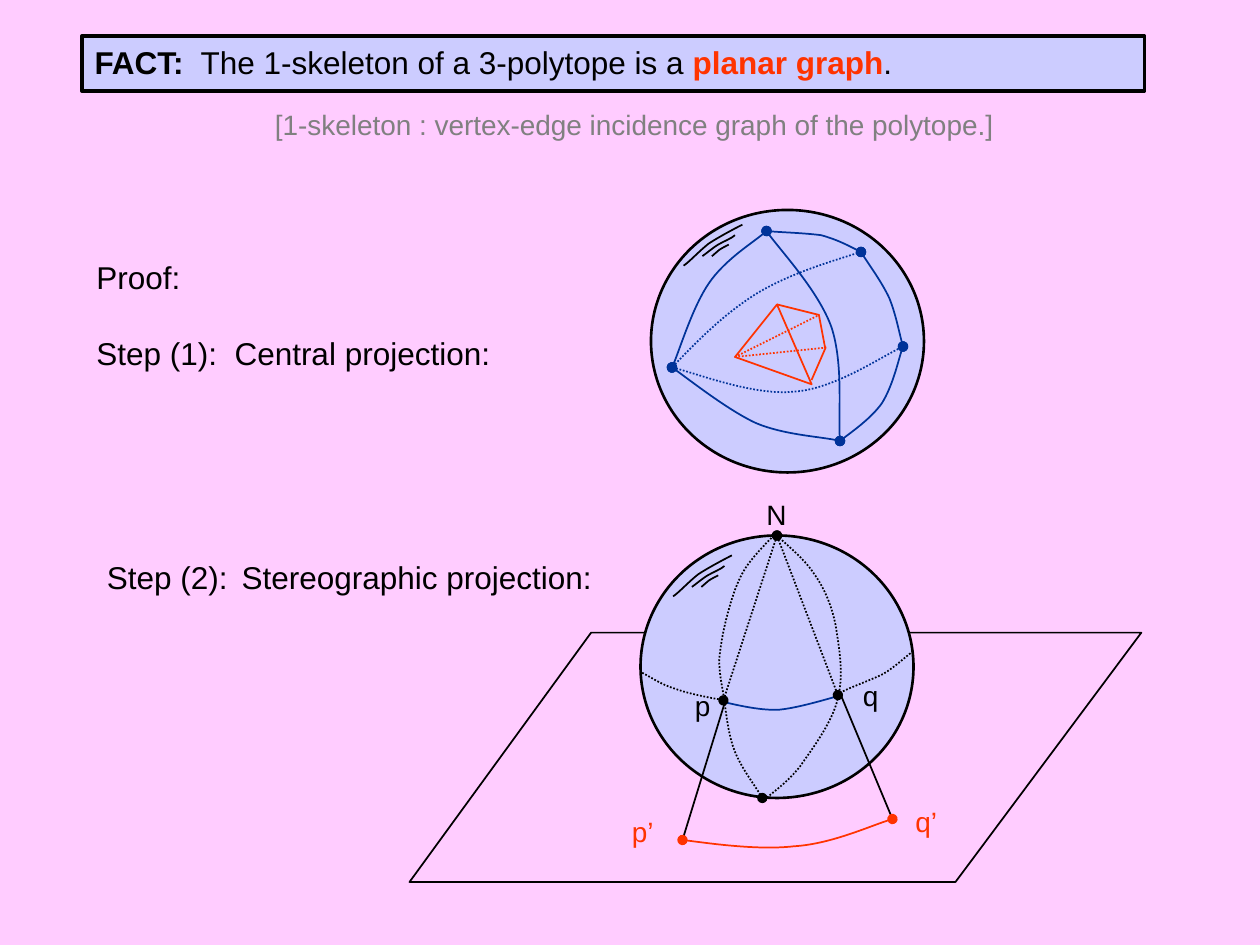
"""Build the slide on projecting a 3-polytope to a planar graph."""
from dataclasses import dataclass
from typing import Optional

from lxml.etree import SubElement
from pptx import Presentation
from pptx.dml.color import RGBColor
from pptx.enum.dml import MSO_LINE
from pptx.enum.shapes import MSO_CONNECTOR, MSO_SHAPE
from pptx.enum.text import MSO_ANCHOR, MSO_AUTO_SIZE as Fit, PP_ALIGN
from pptx.oxml.ns import qn
from pptx.util import Inches, Pt

COLORS = {"page": "FFCCFF", "ball": "CCCCFF", "ink": "000000",
          "accent": "FF3300", "arc": "003399", "note": "808080"}
CELL = Inches(10) / 120
BALL_SIZE = (26, 25)

LEFT, APEX, UPPER, RIGHT, LOWER = (64, 35), (73, 22), (82, 24), (86, 33), (80, 42)
CORE_LEFT, CORE_TOP, CORE_UPPER = (70, 34), (74, 29), (78, 30)
NORTH, NEAR_P, NEAR_Q = (74, 51), (69, 67), (80, 66)
IMAGE_P, IMAGE_Q = (65, 80), (85, 78)


@dataclass
class Stroke:
    points: tuple
    color: str = "ink"
    dotted: bool = False
    head: bool = False
    tail: bool = False
    curved: bool = True
    closed: bool = False
    fill: Optional[str] = None


@dataclass
class Label:
    text: str
    left: float
    top: float
    width: float
    color: str = "ink"


def edge(*points: tuple, dotted: bool = False, color: str = "arc") -> Stroke:
    """Describe a curved edge with a dot at each end."""
    return Stroke(points, color, dotted, head=True, tail=True)


SPHERE_EDGES = [
    edge(LEFT, (64.6, 33.7), (66, 29.2), (67.5, 27), (69, 24.8), (71.9, 23), APEX),
    edge(LEFT, (65.3, 35.9), (69.4, 39.1), (72, 40.3), (74.6, 41.4), (78.4, 41.6), LOWER),
    edge(APEX, (73.9, 22.1), (76.7, 22.2), (78.2, 22.4), (79.7, 22.8), (81.2, 23.6), UPPER),
    edge(UPPER, (82.4, 24.7), (84, 26.9), (84.7, 28.4), (85.3, 29.9), (85.7, 32), RIGHT),
    edge(RIGHT, (85.7, 33.8), (85, 36.8), (84, 38.4), (83, 39.8), (80.9, 41.3), LOWER),
    edge(LEFT, (66.5, 32.4), (69, 29.9), (72, 28), (75, 26.2), (78.5, 25.1), UPPER, dotted=True),
    edge(LEFT, (65.9, 35.4), (71.9, 37.7), (75.6, 37.3), (79.2, 37.1), (83.9, 34), RIGHT, dotted=True),
    edge(APEX, (74, 23.5), (78, 27.8), (79.2, 31.2), (80.3, 34.6), (79.8, 39.7), LOWER),
]
CORE = [
    Stroke((CORE_LEFT, CORE_TOP, (77.3, 36.6)), "accent", curved=False, closed=True, fill="ball"),
    Stroke((CORE_TOP, CORE_UPPER, (78.6, 33.2), (77.3, 36.2)), "accent", curved=False),
]
HATCHES = [
    ((5.7, 0.4), (5.1, 0.7), (3.4, 1.6), (2.5, 2.2), (1.6, 2.9), (0.6, 4), (0.1, 4.3)),
    ((5, 1.4), (4.7, 1.7), (3.9, 2), (3.4, 2.3), (2.9, 2.6), (2.2, 3.2), (1.9, 3.4)),
    ((4.4, 2.3), (4.2, 2.4), (3.8, 2.6), (3.5, 2.8), (3.3, 3), (3, 3.2), (2.8, 3.4)),
]
PLANE = Stroke(((56.3, 60.25), (39, 84), (91, 84), (108.7, 60.25)),
               curved=False, closed=True, fill="page")
MERIDIANS = [
    Stroke(((73.7, 51), (73.2, 51.5), (71.8, 52.9), (71, 54.1), (70.3, 55.2), (69.8, 56.6),
            (69.4, 58.1), (69, 59.5), (68.6, 61.4), (68.5, 62.9), (68.5, 64.3), (68.8, 65.4),
            (69, 66.8), (69.2, 68.3), (69.4, 70.1), (70, 71.6), (70.6, 73.1), (72.1, 75.1),
            (72.6, 76)), dotted=True, tail=True),
    Stroke((NORTH, (74.6, 51.6), (76.6, 53.2), (77.5, 54.6), (78.5, 56), (79.2, 57.6),
            (79.6, 59.6), (79.9, 61.6), (80.4, 64.2), (79.8, 66.5), (79.3, 68.8), (77.3, 71.4),
            (76.2, 73), (75, 74.5), (73.7, 75.4), (73, 76)), dotted=True),
    Stroke(((68.6, 66.8), (69.6, 67), (72.2, 67.7), (74.2, 67.6), (76.2, 67.4), (79, 66.5),
            (80.2, 66.2)), "arc"),
]
RAYS = [Stroke((NORTH, end), dotted=True, head=True, tail=True, curved=False)
        for end in ((68.9, 66.7), (79.8, 66.2))]
IMAGE_EDGE = edge(IMAGE_P, (66.7, 80.2), (72.2, 81), (75.6, 80.6), (79, 80.4), (83, 78.6),
                  IMAGE_Q, color="accent")
EQUATOR = [
    Stroke(((69.1, 66.7), (68.3, 66.6), (65.6, 66.1), (64.3, 65.6), (62.9, 65.2), (61.7, 64.3),
            (61, 64)), dotted=True),
    Stroke((NEAR_Q, (80.6, 65.6), (82.9, 64.8), (84.1, 64.2), (85.3, 63.5), (86.4, 62.4),
            (87, 62)), dotted=True),
]
LABELS = [Label("N", 71.8, 46.8, 4.3), Label("p", 65, 65, 3.9), Label("q", 81, 64, 3.9),
          Label("p’", 59, 77, 4.8, "accent"), Label("q’", 86, 76, 4.8, "accent")]


def grid(*cells: float) -> list[int]:
    """Turn grid columns and rows into slide lengths."""
    return [round(cell * CELL) for cell in cells]


def rgb(name: str) -> RGBColor:
    """Look up a named colour."""
    return RGBColor.from_string(COLORS[name])


def style_line(shape, color: str = "ink", width: float = 1, dotted: bool = False) -> None:
    """Set the colour, width and dash of an outline."""
    shape.line.color.rgb = rgb(color)
    shape.line.width = Pt(width)
    if dotted:
        shape.line.dash_style = MSO_LINE.ROUND_DOT


def fill_with(shape, color: str) -> None:
    """Fill a shape with one colour."""
    shape.fill.solid()
    shape.fill.fore_color.rgb = rgb(color)


def add_span(para, text: str, size: float = 18, color: str = "ink", bold: bool = False) -> None:
    """Add a formatted run to a paragraph."""
    span = para.add_run()
    span.text = text
    span.font.name, span.font.size, span.font.bold = "Arial", Pt(size), bold
    span.font.color.rgb = rgb(color)


def add_text(shapes, text: str, cells: tuple, wrap: bool = False, spacing: float = 1,
             gap: float = 0, **style) -> None:
    """Add a text box with one paragraph for each line of text."""
    box = shapes.add_textbox(*grid(*cells))
    frame = box.text_frame
    frame.word_wrap, frame.auto_size = wrap, Fit.SHAPE_TO_FIT_TEXT
    for index, line in enumerate(text.split("\n")):
        para = frame.add_paragraph() if index else frame.paragraphs[0]
        para.line_spacing = spacing
        if index:
            para.space_before = Pt(gap)
        add_span(para, line, **style)


def draw_stroke(shapes, stroke: Stroke) -> None:
    """Draw a polyline, or a chain of cubic curves, with optional end dots."""
    start, *rest = [tuple(grid(*point)) for point in stroke.points]
    builder = shapes.build_freeform(*start)
    builder.add_line_segments(rest, close=stroke.closed)
    shape = builder.convert_to_shape()
    shape.shadow.inherit = False
    if stroke.fill:
        fill_with(shape, stroke.fill)
    else:
        shape.fill.background()
    style_line(shape, stroke.color, dotted=stroke.dotted)
    if stroke.curved:
        track = shape._element.xpath(".//a:path")[0]
        steps = track.findall(qn("a:lnTo"))
        for index in range(0, len(steps), 3):
            curve = SubElement(track, qn("a:cubicBezTo"))
            for step in steps[index:index + 3]:
                curve.append(step[0])
                track.remove(step)
    for wanted, tag in ((stroke.head, "a:headEnd"), (stroke.tail, "a:tailEnd")):
        if wanted:
            SubElement(shape.line._get_or_add_ln(), qn(tag)).set("type", "oval")


def draw_line(shapes, start: tuple, end: tuple, color: str = "ink", dotted: bool = False) -> None:
    """Draw a straight connector."""
    line = shapes.add_connector(MSO_CONNECTOR.STRAIGHT, *grid(*start, *end))
    style_line(line, color, dotted=dotted)
    SubElement(line._element.spPr, qn("a:effectLst"))


def draw_ball(shapes, left: float, top: float) -> None:
    """Draw the disc of a sphere."""
    ball = shapes.add_shape(MSO_SHAPE.OVAL, *grid(left, top, *BALL_SIZE))
    ball.shadow.inherit = False
    fill_with(ball, "ball")
    style_line(ball, width=1.5)


def draw_hatching(shapes, left: float, top: float) -> None:
    """Draw the three shading strokes of a sphere."""
    for hatch in HATCHES:
        draw_stroke(shapes, Stroke(tuple((left + x, top + y) for x, y in hatch)))


def draw_central(shapes) -> None:
    """Draw the polytope projected from inside onto its sphere."""
    draw_ball(shapes, 62, 20)
    for stroke in CORE:
        draw_stroke(shapes, stroke)
    for end in (CORE_UPPER, (78.7, 33.1)):
        draw_line(shapes, CORE_LEFT, end, "accent", dotted=True)
    for stroke in SPHERE_EDGES:
        draw_stroke(shapes, stroke)
    draw_hatching(shapes, 65, 21)


def draw_stereographic(shapes) -> None:
    """Draw the sphere projected from its north pole onto the plane."""
    draw_stroke(shapes, PLANE)
    draw_ball(shapes, 61, 51)
    for stroke in MERIDIANS + RAYS:
        draw_stroke(shapes, stroke)
    draw_line(shapes, NEAR_P, IMAGE_P)
    draw_line(shapes, NEAR_Q, IMAGE_Q)
    draw_stroke(shapes, IMAGE_EDGE)
    draw_hatching(shapes, 64, 52.5)
    for label in LABELS:
        add_text(shapes, label.text, (label.left, label.top, label.width, 4.4),
                 size=16, color=label.color)
    for stroke in EQUATOR:
        draw_stroke(shapes, stroke)


def write_title(title) -> None:
    """Format the title placeholder as the framed fact."""
    title.left, title.top, title.width, title.height = grid(7.8, 3.45, 101.2, 5.2)
    fill_with(title, "ball")
    style_line(title, width=2.25)
    frame = title.text_frame
    frame.auto_size, frame.vertical_anchor = Fit.NONE, MSO_ANCHOR.TOP
    para = frame.paragraphs[0]
    para.alignment = PP_ALIGN.LEFT
    add_span(para, "FACT:", bold=True)
    add_span(para, "  The 1-skeleton of a 3-polytope is a ")
    add_span(para, "planar graph", color="accent", bold=True)
    add_span(para, ".")


def main() -> None:
    """Build and save the deck."""
    deck = Presentation()
    deck.slide_width, deck.slide_height = Inches(10), Inches(7.5)
    page = deck.slides.add_slide(deck.slide_layouts[5])
    fill_with(page.background, "page")
    write_title(page.shapes.title)
    add_text(page.shapes, "Proof:\nStep (1):  Central projection:", (8, 24, 51, 12),
             wrap=True, gap=22)
    draw_central(page.shapes.add_group_shape().shapes)
    draw_stereographic(page.shapes.add_group_shape().shapes)
    add_text(page.shapes, "[1-skeleton : vertex-edge incidence graph of the polytope.]",
             (25, 10, 71, 4.1), spacing=0.9, size=16, color="note")
    add_text(page.shapes, "Step (2):\t Stereographic projection:", (9, 53, 48.6, 4.4), spacing=0.9)
    deck.save("out.pptx")


if __name__ == "__main__":
    main()
